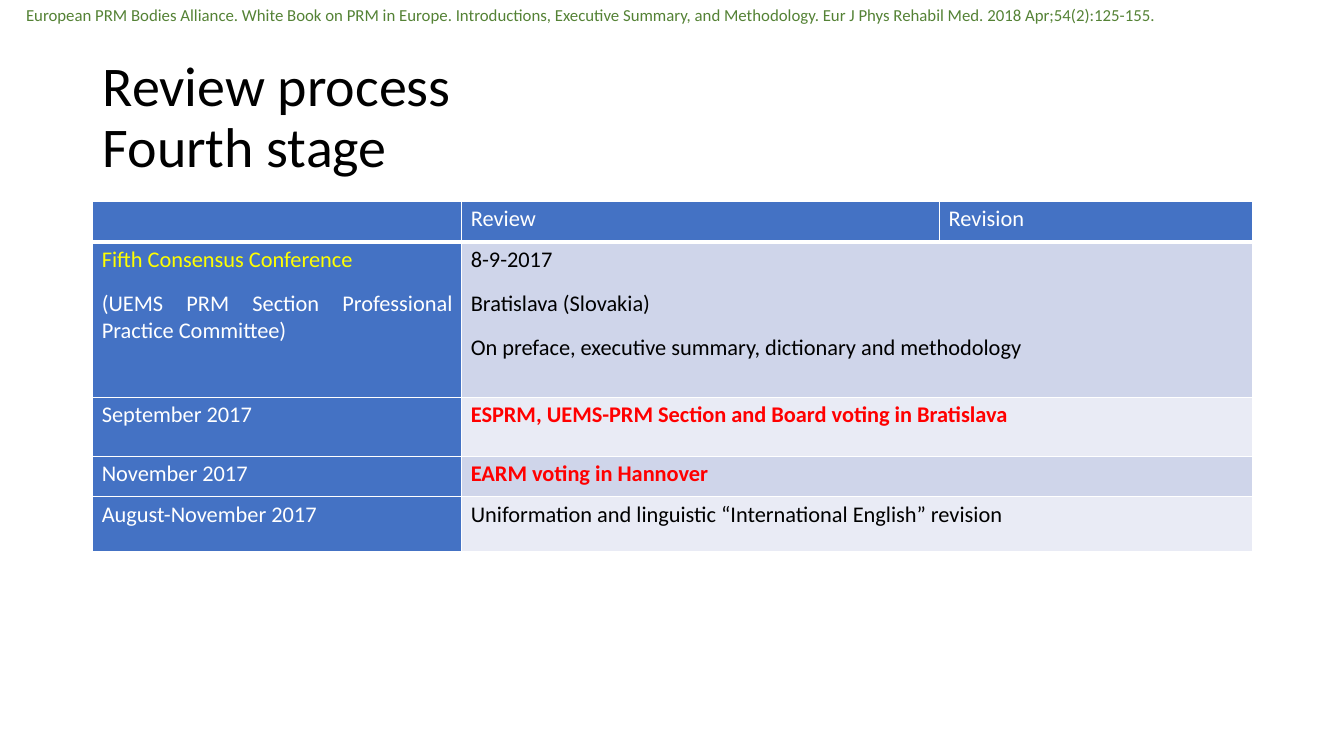
from dataclasses import dataclass

from lxml import etree
from pptx import Presentation
from pptx import util as u
from pptx.dml.color import RGBColor
from pptx.enum import text
from pptx.oxml.ns import qn


@dataclass(frozen=True)
class Theme:
    font: str = "Calibri"
    citation_size: int = 12
    title_size: int = 40
    table_size: int = 16
    green: str = "548235"
    black: str = "000000"
    white: str = "FFFFFF"
    yellow: str = "FFFF00"
    red: str = "FF0000"
    blue: str = "4472C4"
    bands: tuple = ("CFD5EA", "E9EBF5")


THEME = Theme()
WIDTH, HEIGHT = 13.33, 7.5
MARGIN, CONTENT_WIDTH = 0.92, 11.5
COLUMNS = (3.66, 4.74, 3.1)
ROWS = (0.4, 1.54, 0.59, 0.4, 0.54)

CITATION = (
    "European PRM Bodies Alliance. White Book on PRM in Europe. Introductions, "
    "Executive Summary, and Methodology. Eur J Phys Rehabil Med. "
    "2018 Apr;54(2):125-155."
)
HEADINGS = ("", "Review", "Revision")
STAGES = (
    (
        ("Fifth Consensus Conference", "(UEMS PRM Section Professional Practice Committee)"),
        ("8-9-2017", "Bratislava (Slovakia)",
         "On preface, executive summary, dictionary and methodology"),
        False,
    ),
    (("September 2017",), ("ESPRM, UEMS-PRM Section and Board voting in Bratislava",), True),
    (("November 2017",), ("EARM voting in Hannover",), True),
    (("August-November 2017",),
     ("Uniformation and linguistic “International English” revision",), False),
)


def style(para, size, color, bold=False):
    for span in para.runs:
        span.font.name = THEME.font
        span.font.size = u.Pt(size)
        span.font.bold = bold
        span.font.color.rgb = RGBColor.from_string(color)


def add_text(page, box, words, size, color, anchor, line_spacing=1.0):
    frame = page.shapes.add_textbox(*map(u.Inches, box)).text_frame
    frame.word_wrap = True
    frame.vertical_anchor = anchor
    frame.text = words
    para = frame.paragraphs[0]
    para.line_spacing = line_spacing
    style(para, size, color)


def set_borders(cell, bottom_width):
    properties = cell._tc.get_or_add_tcPr()
    for side, width in (("L", 1), ("R", 1), ("T", 1), ("B", bottom_width)):
        line = etree.SubElement(properties, qn(f"a:ln{side}"), w=str(u.Pt(width)))
        fill = etree.SubElement(line, qn("a:solidFill"))
        etree.SubElement(fill, qn("a:srgbClr"), val=THEME.white)


def fill_cell(cell, lines, fill, colors, bold=False, bottom_width=1):
    set_borders(cell, bottom_width)
    cell.fill.solid()
    cell.fill.fore_color.rgb = RGBColor.from_string(fill)
    cell.margin_left = cell.margin_right = u.Inches(0.09)
    cell.margin_top = cell.margin_bottom = u.Inches(0.04)
    cell.text = "\n".join(lines)
    for index, (para, color) in enumerate(zip(cell.text_frame.paragraphs, colors)):
        para.alignment = text.PP_ALIGN.JUSTIFY
        para.space_before = u.Pt(6 if index else 0)
        para.space_after = u.Pt(6)
        style(para, THEME.table_size, color, bold)


def add_review_table(page, box):
    table = page.shapes.add_table(len(ROWS), len(COLUMNS), *map(u.Inches, box)).table
    for column, width in zip(table.columns, COLUMNS):
        column.width = u.Inches(width)
    for row, height in zip(table.rows, ROWS):
        row.height = u.Inches(height)
    for column, heading in enumerate(HEADINGS):
        fill_cell(table.cell(0, column), [heading], THEME.blue, [THEME.white], bottom_width=3)
    for row, (stage, details, vote) in enumerate(STAGES, start=1):
        stage_colors = (THEME.yellow, THEME.white) if len(stage) > 1 else (THEME.white,)
        fill_cell(table.cell(row, 0), stage, THEME.blue, stage_colors)
        table.cell(row, 1).merge(table.cell(row, 2))
        detail_color = THEME.red if vote else THEME.black
        band = THEME.bands[(row - 1) % 2]
        fill_cell(table.cell(row, 1), details, band, [detail_color] * len(details), vote)


def main():
    deck = Presentation()
    deck.slide_width, deck.slide_height = u.Inches(WIDTH), u.Inches(HEIGHT)
    page = deck.slides.add_slide(deck.slide_layouts[6])
    add_text(page, (0.16, 0, WIDTH - 0.16, 0.3), CITATION, THEME.citation_size,
             THEME.green, text.MSO_ANCHOR.TOP)
    add_text(page, (MARGIN, 0.51, CONTENT_WIDTH, 1.34), "Review process\vFourth stage",
             THEME.title_size, THEME.black, text.MSO_ANCHOR.MIDDLE, 0.9)
    add_review_table(page, (MARGIN, 2, CONTENT_WIDTH, sum(ROWS)))
    deck.save("out.pptx")


if __name__ == "__main__":
    main()
